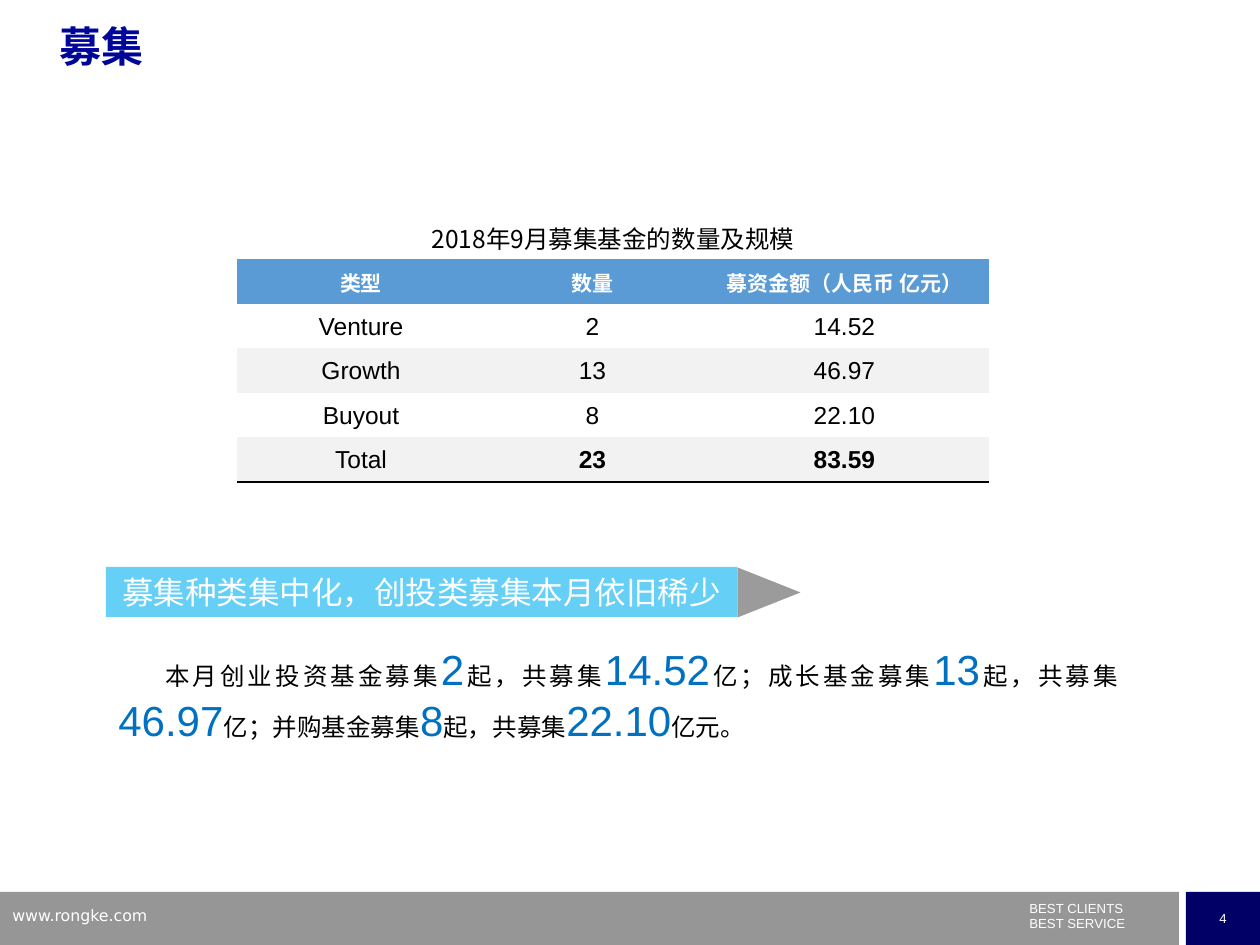
"""Build the fundraising slide: table, arrow banner, summary sentence and footer."""
from lxml.etree import SubElement
from pptx import Presentation
from pptx.dml.color import RGBColor
from pptx.enum.shapes import MSO_SHAPE
from pptx.enum.text import MSO_ANCHOR, PP_ALIGN
from pptx.oxml import parse_xml
from pptx.oxml.ns import nsdecls, qn
from pptx.util import Pt

SCALE = 914400 / 126
NO_GRID_STYLE = "{2D5ABB26-0587-4C30-8999-92F81FD0307C}"
LATIN, WEB, CHINESE, CAPTION = "Arial", "DejaVu Sans", "Noto Sans CJK SC", "Noto Sans CJK JP"
COLORS = {
    "white": "FFFFFF", "black": "000000", "title": "000798", "number": "0070C0",
    "footer": "969696", "page": "000066", "banner": "00B0F0", "tip": "595959",
    "header": "5B9BD5", "band": "F2F2F2",
}
FUNDS = [
    ("类型", "数量", "募资金额（人民币 亿元）"),
    ("Venture", "2", "14.52"),
    ("Growth", "13", "46.97"),
    ("Buyout", "8", "22.10"),
    ("Total", "23", "83.59"),
]
SUMMARY = [
    "本月创业投资基金募集", "2", "起，共募集", "14.52", "亿；成长基金募集", "13", "起，共募集",
    "46.97", "亿；并购基金募集", "8", "起，共募集", "22.10", "亿元。",
]


def emu(px):
    return round(px * SCALE)


def rgb(name):
    return RGBColor.from_string(COLORS[name])


class SlideBuilder:
    def __init__(self, page):
        self.page = page

    def style(self, font, size, color, face=LATIN, bold=False):
        font.size, font.bold, font.name = Pt(size), bold, face
        font.color.rgb = rgb(color)
        if face in (CHINESE, CAPTION):
            SubElement(font._rPr, qn("a:ea")).set("typeface", face)

    def set_lines(self, frame, lines, size, color, face=LATIN, bold=False, align=PP_ALIGN.LEFT):
        for index, line in enumerate(lines):
            para = frame.add_paragraph() if index else frame.paragraphs[0]
            para.text, para.alignment = line, align
            self.style(para.font, size, color, face, bold)

    def text_box(self, box, top_inset=6):
        frame = self.page.shapes.add_textbox(*map(emu, box)).text_frame
        frame.word_wrap = True
        frame.margin_top = emu(top_inset)
        return frame

    def shape(self, kind, box, color, alpha=None, rotation=0):
        shape = self.page.shapes.add_shape(kind, *map(emu, box))
        shape.shadow.inherit = False
        shape.rotation = rotation
        shape.fill.solid()
        shape.fill.fore_color.rgb = rgb(color)
        shape.line.fill.background()
        if alpha:
            fill_color = shape._element.spPr.find(".//" + qn("a:srgbClr"))
            SubElement(fill_color, qn("a:alpha")).set("val", str(alpha * 1000))
        shape.text_frame.vertical_anchor = MSO_ANCHOR.MIDDLE
        return shape.text_frame

    def mixed_sentence(self, box, pieces, indent):
        para = self.text_box(box).paragraphs[0]
        para.alignment = PP_ALIGN.JUSTIFY
        para._p.get_or_add_pPr().set("indent", str(emu(indent)))
        for index, piece in enumerate(pieces):
            span = para.add_run()
            span.text = piece
            if index % 2:
                self.style(span.font, 24, "number")
            else:
                self.style(span.font, 14, "black", CHINESE)

    def cell(self, cell, text, size, color, face=LATIN, bold=False, fill=None):
        cell.margin_left = cell.margin_right = cell.margin_top = emu(1)
        cell.margin_bottom = 0
        cell.vertical_anchor = MSO_ANCHOR.MIDDLE
        self.set_lines(cell.text_frame, [text], size, color, face, bold, PP_ALIGN.CENTER)
        if fill:
            cell.fill.solid()
            cell.fill.fore_color.rgb = rgb(fill)
        else:
            cell.fill.background()

    def bottom_border(self, cell):
        cell._tc.get_or_add_tcPr().insert(0, parse_xml(
            f'<a:lnB {nsdecls("a")} w="12700"><a:solidFill>'
            f'<a:srgbClr val="{COLORS["black"]}"/></a:solidFill></a:lnB>'))

    def table(self, box, widths, caption, rows):
        table = self.page.shapes.add_table(len(rows) + 1, len(widths), *map(emu, box)).table
        table._tbl.tblPr.find(qn("a:tableStyleId")).text = NO_GRID_STYLE
        table.first_row = table.horz_banding = False
        for column, width in zip(table.columns, widths):
            column.width = emu(width)
        table.cell(0, 0).merge(table.cell(0, len(widths) - 1))
        self.cell(table.cell(0, 0), caption, 14, "black", CAPTION)
        for row, values in enumerate(rows, 1):
            for column, value in enumerate(values):
                cell = table.cell(row, column)
                last = row == len(rows)
                if row == 1:
                    self.cell(cell, value, 12, "white", CHINESE, True, "header")
                else:
                    fill = None if row % 2 == 0 else "band"
                    self.cell(cell, value, 14, "black", bold=last and column > 0, fill=fill)
                if last:
                    self.bottom_border(cell)


def main():
    deck = Presentation()
    deck.slide_width, deck.slide_height = emu(1260), emu(945)
    builder = SlideBuilder(deck.slides.add_slide(deck.slide_layouts[6]))

    builder.shape(MSO_SHAPE.RECTANGLE, (0, 892, 1179, 53), "footer")
    number = builder.shape(MSO_SHAPE.RECTANGLE, (1186, 892, 74, 53), "page")
    number.word_wrap = False
    builder.set_lines(number, ["4"], 7.5, "white", align=PP_ALIGN.CENTER)
    motto = builder.text_box((1017, 900, 189, 37), top_inset=0)
    builder.set_lines(motto, ["BEST CLIENTS", "BEST SERVICE"], 7.5, "white")
    builder.set_lines(builder.text_box((0, 900, 302, 33)), ["www.rongke.com"], 9, "white", WEB)

    builder.mixed_sentence((106, 638, 1024, 115), SUMMARY, indent=47)
    banner = builder.shape(MSO_SHAPE.RECTANGLE, (106, 567, 631, 50), "banner", alpha=60)
    builder.set_lines(banner, ["募集种类集中化，创投类募集本月依旧稀少"], 18, "white", CHINESE,
                      align=PP_ALIGN.CENTER)
    builder.shape(MSO_SHAPE.ISOSCELES_TRIANGLE, (744, 561, 50, 63), "tip", alpha=60, rotation=90)

    title = builder.text_box((47, 20, 1134, 88))
    builder.set_lines(title, ["募集"], 24, "title", bold=True)
    title.paragraphs[0].line_spacing = 0.9
    builder.table((237, 215, 752, 267), (248, 215, 289), "2018年9月募集基金的数量及规模", FUNDS)
    deck.save("out.pptx")


if __name__ == "__main__":
    main()
